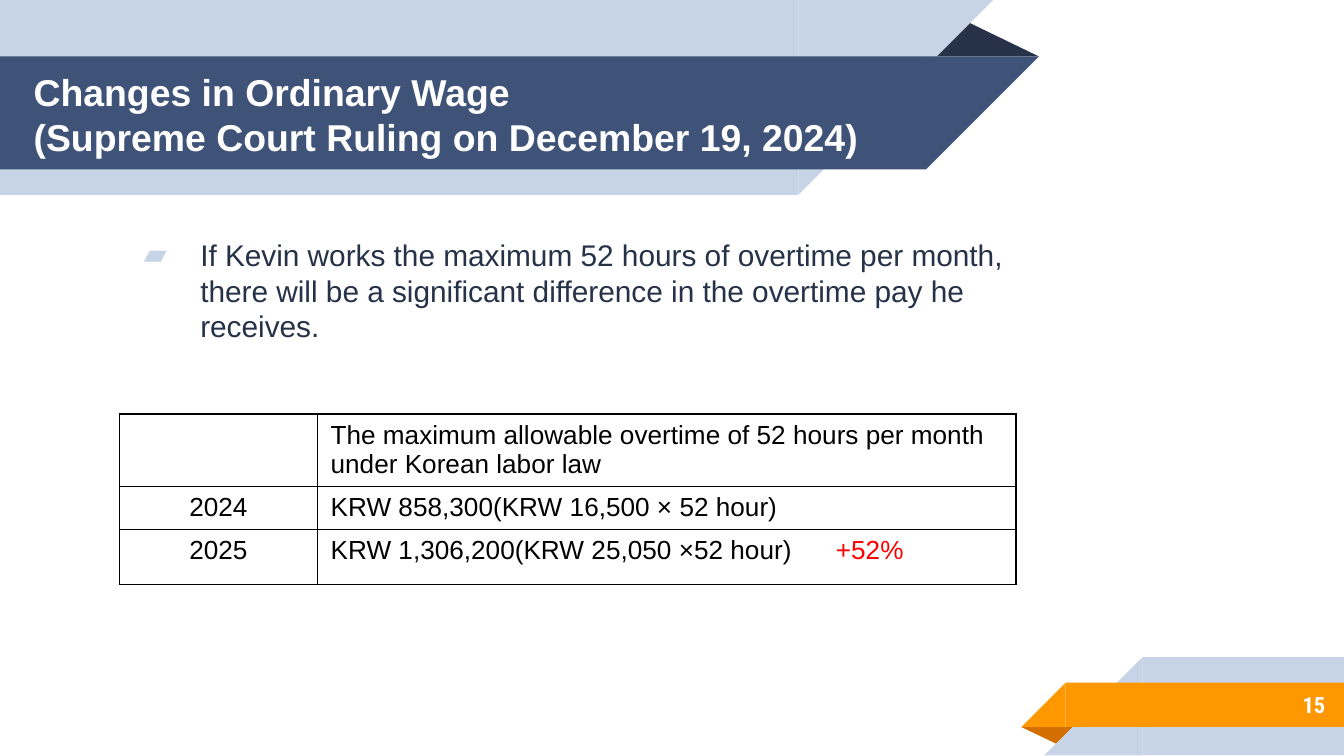
from lxml import etree
from pptx import Presentation
from pptx.dml.color import RGBColor
from pptx.enum import shapes, text
from pptx.oxml import ns
from pptx.util import Inches, Pt

COLORS = {
    "pale": "C7D3E6", "navy": "3F5378", "ink": "263248", "orange": "FF9800",
    "rust": "D26F00", "white": "FFFFFF", "black": "000000", "red": "FF0000",
}


def style(run, size, color, bold=False, font="Arial"):
    run.font.name, run.font.size, run.font.bold = font, Pt(size), bold
    run.font.color.rgb = RGBColor.from_string(COLORS[color])


def add_xml(parent, tag, **attributes):
    return etree.SubElement(parent, ns.qn(tag), attributes)


prs = Presentation()
prs.slide_width = Inches(10)
prs.slide_height = Inches(10 * 9 / 16)
slide = prs.slides.add_slide(prs.slide_layouts[1])
title, body = slide.placeholders

# Ribbons: each slanted end is a square right triangle beside its band
RECT, CORNER, FOLD = (shapes.MSO_SHAPE.RECTANGLE, shapes.MSO_SHAPE.RIGHT_TRIANGLE,
                      shapes.MSO_SHAPE.ISOSCELES_TRIANGLE)
ribbons = [
    (FOLD, 7.6, 5.41, 0.43, 0.14, 180, "rust"),
    (RECT, 8.5, 4.89, 1.5, 0.73, 0, "pale"),
    (CORNER, 7.77, 4.89, 0.73, 0.73, 270, "pale"),
    (RECT, 7.93, 5.08, 2.08, 0.33, 0, "orange"),
    (CORNER, 7.6, 5.08, 0.33, 0.33, 270, "orange"),
    (FOLD, 6.88, 0.14, 0.85, 0.28, 0, "ink"),
    (RECT, 0, 0, 5.94, 1.45, 0, "pale"),
    (CORNER, 5.94, 0, 1.45, 1.45, 90, "pale"),
    (RECT, 0, 0.42, 6.89, 0.84, 0, "navy"),
    (CORNER, 6.89, 0.42, 0.84, 0.84, 90, "navy"),
]
for kind, left, top, width, height, angle, color in ribbons:
    ribbon = slide.shapes.add_shape(
        kind, Inches(left), Inches(top), Inches(width), Inches(height))
    ribbon.rotation = angle
    ribbon.shadow.inherit = False
    ribbon.fill.solid()
    ribbon.fill.fore_color.rgb = RGBColor.from_string(COLORS[color])
    ribbon.line.fill.background()
    if kind == FOLD:
        ribbon.adjustments[0] = 0.32

# Title, bullet and page number, placed in front of the ribbons
page_number = slide.shapes.add_textbox(0, 0, 0, 0)
blocks = [
    (title, 0, 0.43, 6.9, 0.84, 0.25, 0.1, text.MSO_ANCHOR.MIDDLE,
     "Changes in Ordinary Wage\v(Supreme Court Ruling on December 19, 2024)"),
    (body, 0.89, 1.45, 6.71, 3.44, 0.1, 0.31, text.MSO_ANCHOR.TOP,
     "If Kevin works the maximum 52 hours of overtime per month, there will be "
     "a significant difference in the overtime pay he receives."),
    (page_number, 8.33, 5.07, 1.63, 0.34, 0.1, 0.1, text.MSO_ANCHOR.MIDDLE, "15"),
]
for block, left, top, width, height, inset_left, inset_top, anchor, words in blocks:
    slide.shapes._spTree.append(block._element)
    block.left, block.top = Inches(left), Inches(top)
    block.width, block.height = Inches(width), Inches(height)
    frame = block.text_frame
    frame.text = words
    frame.word_wrap, frame.auto_size = True, text.MSO_AUTO_SIZE.NONE
    frame.vertical_anchor = anchor
    frame.margin_left, frame.margin_top = Inches(inset_left), Inches(inset_top)
    frame.margin_right = frame.margin_bottom = Inches(0.1)
    frame.paragraphs[0].alignment = text.PP_ALIGN.LEFT
    frame.paragraphs[0].space_before = Pt(0)
    frame.paragraphs[0].line_spacing = 1.0

for run in title.text_frame.paragraphs[0].runs:
    style(run, 20, "white", bold=True)

bullet = body.text_frame.paragraphs[0]
style(bullet.runs[0], 16, "ink")
bullet_format = bullet._p.get_or_add_pPr()
bullet_format.set("marL", str(Inches(0.5)))
bullet_format.set("indent", str(Inches(-0.42)))
add_xml(add_xml(bullet_format, "a:buClr"), "a:srgbClr", val=COLORS["pale"])
add_xml(bullet_format, "a:buChar", char="▰")

page_number.text_frame.paragraphs[0].alignment = text.PP_ALIGN.RIGHT
style(page_number.text_frame.paragraphs[0].runs[0], 12, "white", True, "Roboto Condensed")

# Overtime pay by year
overtime = [
    ("", "The maximum allowable overtime of 52 hours per month under Korean labor law"),
    ("2024", "KRW 858,300(KRW 16,500 × 52 hour)"),
    ("2025", "KRW 1,306,200(KRW 25,050 ×52 hour)\t"),
]
wages = slide.shapes.add_table(
    3, 2, Inches(0.89), Inches(3.08), Inches(6.67), Inches(1.27)).table
wages.first_row = wages.horz_banding = False
for column, width in zip(wages.columns, (1.47, 5.2)):
    column.width = Inches(width)
for row, height, entries in zip(wages.rows, (0.54, 0.32, 0.41), overtime):
    row.height = Inches(height)
    for cell, words in zip(row.cells, entries):
        cell.text = words
        for run in cell.text_frame.paragraphs[0].runs:
            style(run, 14, "black")
        for side in ("L", "R", "T", "B"):
            border = add_xml(cell._tc.get_or_add_tcPr(), f"a:ln{side}", w=str(Pt(0.75)))
            add_xml(add_xml(border, "a:solidFill"), "a:srgbClr", val=COLORS["black"])
        cell.fill.background()
    row.cells[0].text_frame.paragraphs[0].alignment = text.PP_ALIGN.CENTER

raised_pay = wages.cell(2, 1).text_frame.paragraphs[0]
increase = raised_pay.add_run()
increase.text = "+52%"
style(increase, 14, "red")
tab_stops = add_xml(raised_pay._p.get_or_add_pPr(), "a:tabLst")
add_xml(tab_stops, "a:tab", pos=str(Inches(3.76)), algn="l")

prs.save("out.pptx")
